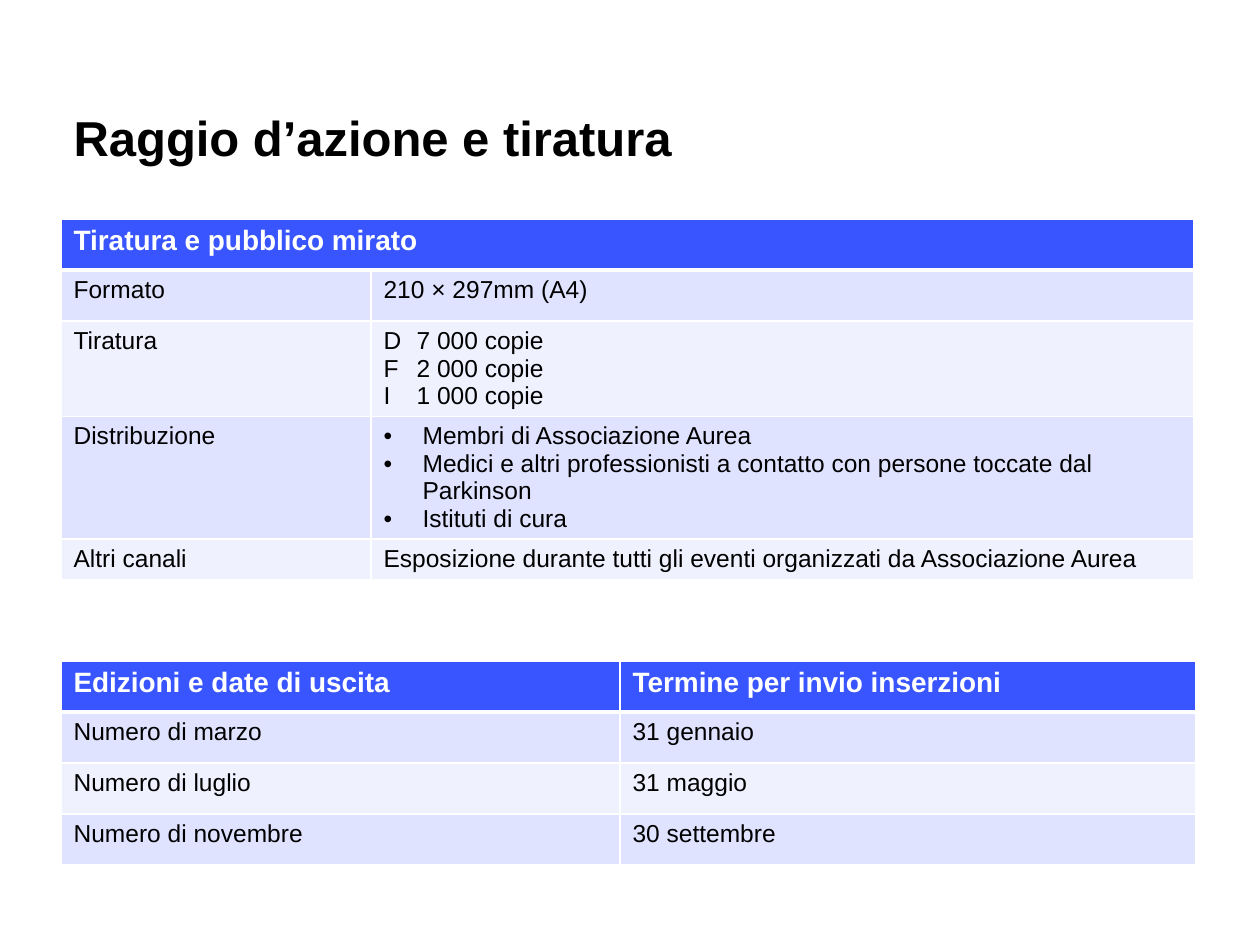
from lxml import etree
from pptx import Presentation
from pptx.dml.color import RGBColor
from pptx.enum.text import MSO_ANCHOR, PP_ALIGN
from pptx.oxml.ns import qn
from pptx.util import Pt

EMU_PER_PX = 914400 / 126
LEFT, MIDDLE = PP_ALIGN.LEFT, MSO_ANCHOR.MIDDLE
TITLE_ONLY = 5
FONT = "Arial"
BLACK, WHITE = "000000", "FFFFFF"
HEADER_FILL = "3855FF"
BAND_FILLS = ("DFE3FF", "F0F1FF")
LANGUAGE_TAB = 33
BULLET_INDENT = 39

CIRCULATION = [
    ["Tiratura e pubblico mirato", ""],
    ["Formato", "210 × 297mm (A4)"],
    ["Tiratura", "D\t7 000 copie\nF\t2 000 copie\nI\t1 000 copie"],
    ["Distribuzione", [
        "Membri di Associazione Aurea",
        "Medici e altri professionisti a contatto con persone toccate dal Parkinson",
        "Istituti di cura",
    ]],
    ["Altri canali",
     "Esposizione durante tutti gli eventi organizzati da Associazione Aurea"],
]
ISSUES = [
    ["Edizioni e date di uscita", "Termine per invio inserzioni"],
    ["Numero di marzo", "31 gennaio"],
    ["Numero di luglio", "31 maggio"],
    ["Numero di novembre", "30 settembre"],
]


def px(length):
    return round(length * EMU_PER_PX)


def rgb(value):
    return RGBColor.from_string(value)


def style_font(font, size, color, bold):
    font.name = FONT
    font.size = Pt(size)
    font.bold = bold
    font.color.rgb = rgb(color)


def add_bullet(paragraph):
    properties = paragraph._p.get_or_add_pPr()
    properties.set("marL", str(px(BULLET_INDENT)))
    properties.set("indent", str(-px(BULLET_INDENT)))
    etree.SubElement(properties, qn("a:buFont"), typeface=FONT)
    etree.SubElement(properties, qn("a:buChar"), char="•")


def add_tab_stop(paragraph):
    stops = etree.SubElement(paragraph._p.get_or_add_pPr(), qn("a:tabLst"))
    etree.SubElement(stops, qn("a:tab"), pos=str(px(LANGUAGE_TAB)), algn="l")


def set_borders(cell, top, bottom):
    """Draw white cell borders; top and bottom widths are in points."""
    properties = cell._tc.get_or_add_tcPr()
    for side, width in (("L", 1), ("R", 1), ("T", top), ("B", bottom)):
        line = etree.SubElement(properties, qn(f"a:ln{side}"), w=str(Pt(width)))
        fill = etree.SubElement(line, qn("a:solidFill"))
        etree.SubElement(fill, qn("a:srgbClr"), val=WHITE)


def fill_cell(cell, content, row):
    """Write a string as plain lines, or a list as bullets, in the row's style."""
    is_header = row == 0
    set_borders(cell, 3 if row == 1 else 1, 3 if is_header else 1)
    cell.fill.solid()
    cell.fill.fore_color.rgb = rgb(HEADER_FILL if is_header else BAND_FILLS[(row - 1) % 2])
    bulleted = isinstance(content, list)
    cell.text_frame.text = "\n".join(content) if bulleted else content
    for paragraph in cell.text_frame.paragraphs:
        if bulleted:
            add_bullet(paragraph)
        elif "\t" in paragraph.text:
            add_tab_stop(paragraph)
        size, color = (16, WHITE) if is_header else (14, BLACK)
        for run in paragraph.runs:
            style_font(run.font, size, color, is_header)


def add_info_table(slide, top, widths, heights, content):
    table = slide.shapes.add_table(
        len(heights), len(widths),
        px(61), px(top), px(sum(widths)), px(sum(heights))).table
    for column, width in zip(table.columns, widths):
        column.width = px(width)
    for row, (height, texts) in enumerate(zip(heights, content)):
        table.rows[row].height = px(height)
        for column, text in enumerate(texts):
            fill_cell(table.cell(row, column), text, row)
    return table


def add_title(slide, text):
    title = slide.shapes.title
    title.left, title.top, title.width, title.height = map(px, (61, 87, 843, 100))
    title.text_frame.text = text
    title.text_frame.vertical_anchor = MIDDLE
    paragraph = title.text_frame.paragraphs[0]
    paragraph.alignment = LEFT
    style_font(paragraph.runs[0].font, 28, BLACK, True)


def main():
    presentation = Presentation()
    presentation.slide_width, presentation.slide_height = px(1260), px(945)
    slide = presentation.slides.add_slide(presentation.slide_layouts[TITLE_ONLY])
    add_title(slide, "Raggio d’azione e tiratura")
    circulation = add_info_table(slide, 219, (310, 823), (51, 51, 95, 123, 40), CIRCULATION)
    circulation.cell(0, 0).merge(circulation.cell(0, 1))
    add_info_table(slide, 661, (559, 576), (51,) * 4, ISSUES)
    presentation.save("out.pptx")


if __name__ == "__main__":
    main()
